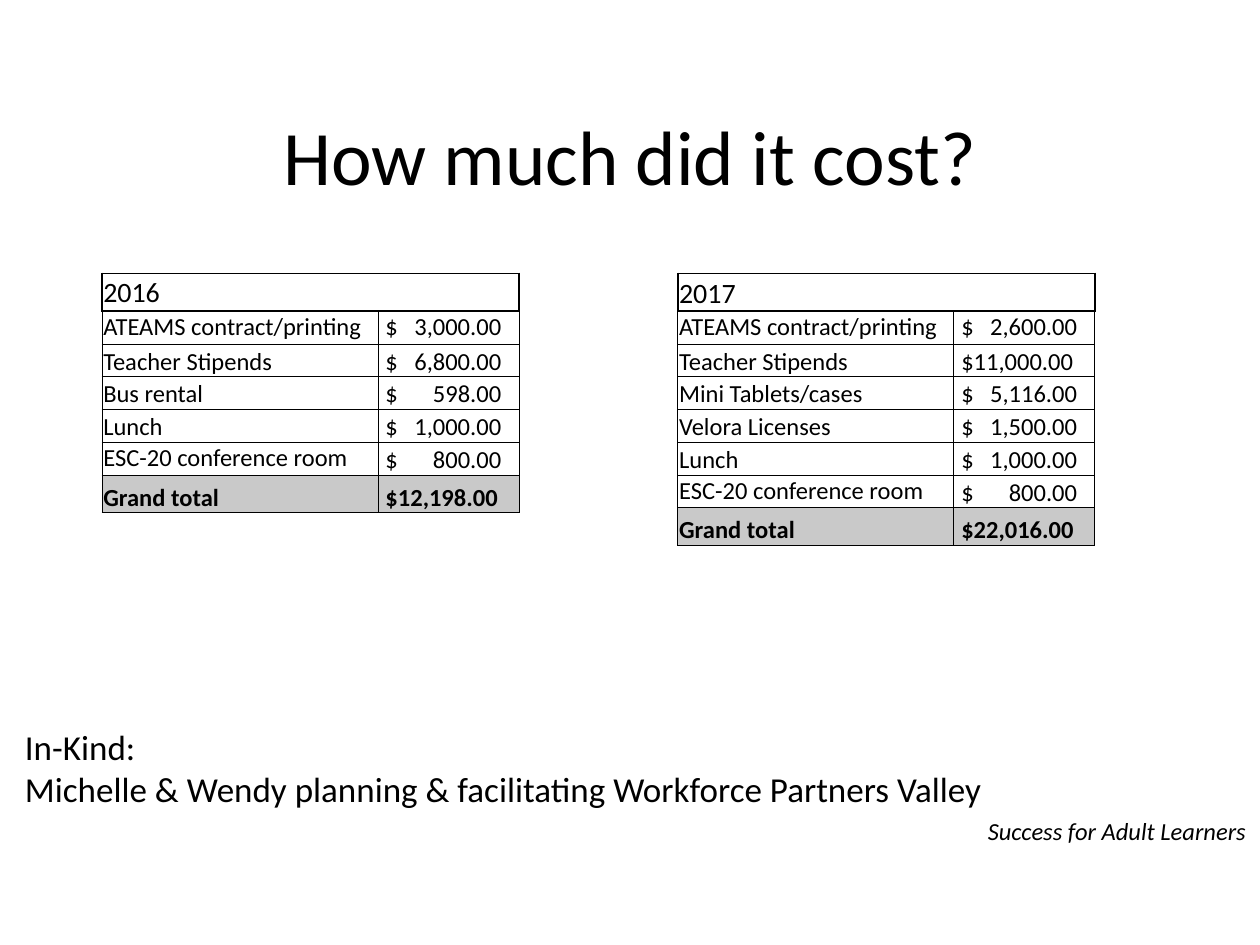
from pptx import Presentation, util as u
from pptx.dml.color import RGBColor
from pptx.enum import text
from pptx.oxml import parse_xml
from pptx.oxml.ns import nsdecls

INK = "000000"
TOTAL_FILL = "C9C9C9"
ANCHOR = text.MSO_ANCHOR
ALIGN = text.PP_ALIGN


def colour(value):
    return RGBColor.from_string(value)


def assign(target, values):
    for name, value in values.items():
        setattr(target, name, value)


class CostSlide:
    font = "Calibri"
    columns = (2.19, 1.12)
    amount_tab = 0.92

    def __init__(self, deck):
        self.slide = deck.slides.add_slide(deck.slide_layouts[6])

    def add_span(self, para, content, size, **style):
        span = para.add_run()
        span.text = content
        assign(span.font, {"name": self.font, "size": u.Pt(size), **style})
        span.font.color.rgb = colour(INK)

    def text_box(self, place, lines, size, align=ALIGN.LEFT,
                 frame_format=None, **style):
        box = self.slide.shapes.add_textbox(*map(u.Inches, place))
        frame = box.text_frame
        assign(frame, {"word_wrap": True, **(frame_format or {})})
        for index, line in enumerate(lines):
            para = frame.add_paragraph() if index else frame.paragraphs[0]
            para.alignment = align
            self.add_span(para, line, size, **style)

    def borders(self, cell, top, other):
        properties = cell._tc.get_or_add_tcPr()
        for side, width in zip("LRTB", (other, other, top, other)):
            properties.append(parse_xml(
                f'<a:ln{side} {nsdecls("a")} w="{u.Pt(width)}"><a:solidFill>'
                f'<a:srgbClr val="{INK}"/></a:solidFill></a:ln{side}>'))

    def cell(self, cell, content, size, anchor, top=0.5, other=0.5,
             fill=None, left=0.01, **style):
        assign(cell, {"margin_left": u.Inches(left),
                      "margin_right": u.Inches(0.01),
                      "margin_top": u.Inches(0.01),
                      "margin_bottom": 0,
                      "vertical_anchor": anchor})
        self.borders(cell, top, other)
        if fill:
            cell.fill.solid()
            cell.fill.fore_color.rgb = colour(fill)
        else:
            cell.fill.background()
        para = cell.text_frame.paragraphs[0]
        if "\t" in content:
            para._p.get_or_add_pPr().append(parse_xml(
                f'<a:tabLst {nsdecls("a")}><a:tab '
                f'pos="{u.Inches(self.amount_tab)}" algn="r"/></a:tabLst>'))
        if content:
            self.add_span(para, content, size, **style)

    def cost_table(self, left, year, year_anchor, costs, total):
        heights = [0.3] + [0.26] * len(costs) + [0.3]
        place = (left, 2.17, sum(self.columns), sum(heights))
        table = self.slide.shapes.add_table(
            len(heights), 2, *map(u.Inches, place)).table
        assign(table, {"first_row": False, "horz_banding": False})
        for column, width in zip(table.columns, self.columns):
            column.width = u.Inches(width)
        for row, height in zip(table.rows, heights):
            row.height = u.Inches(height)

        table.cell(0, 0).merge(table.cell(0, 1))
        for column, content in enumerate((year, "")):
            self.cell(table.cell(0, column), content, 16, year_anchor,
                      top=1, other=1)

        for row, (item, amount) in enumerate(costs, 1):
            first = row == 1
            amount_anchor = ANCHOR.TOP if first else ANCHOR.BOTTOM
            item_anchor = ANCHOR.TOP if row == len(costs) else amount_anchor
            top = 1 if first else 0.5
            gap = "\t" if len(amount) < 9 else ""
            self.cell(table.cell(row, 0), item, 14, item_anchor, top)
            self.cell(table.cell(row, 1), f"${gap}{amount}", 14,
                      amount_anchor, top, left=0.06)

        last = len(heights) - 1
        for column, content in enumerate(("Grand total", total)):
            self.cell(table.cell(last, column), content, 14, ANCHOR.BOTTOM,
                      fill=TOTAL_FILL, left=(0.01, 0.06)[column], bold=True)


def main():
    deck = Presentation()
    assign(deck, {"slide_width": u.Inches(10), "slide_height": u.Inches(7.5)})
    page = CostSlide(deck)
    page.text_box((0.5, 0.6, 9, 1.25), ["How much did it cost?"], 44,
                  ALIGN.CENTER, {"vertical_anchor": ANCHOR.MIDDLE})
    page.text_box((0.1, 5.71, 8.6, 1.11), [
        "In-Kind:",
        "Michelle & Wendy planning & facilitating Workforce Partners Valley",
    ], 20)
    page.cost_table(5.38, "2017", ANCHOR.BOTTOM, [
        ("ATEAMS contract/printing", "2,600.00"),
        ("Teacher Stipends", "11,000.00"),
        ("Mini Tablets/cases", "5,116.00"),
        ("Velora Licenses", "1,500.00"),
        ("Lunch", "1,000.00"),
        ("ESC-20 conference room", "800.00"),
    ], "$22,016.00")
    page.cost_table(0.81, "2016", ANCHOR.MIDDLE, [
        ("ATEAMS contract/printing", "3,000.00"),
        ("Teacher Stipends", "6,800.00"),
        ("Bus rental", "598.00"),
        ("Lunch", "1,000.00"),
        ("ESC-20 conference room", "800.00"),
    ], "$12,198.00")
    page.text_box((7.73, 6.43, 2.27, 0.34), ["Success for Adult Learners"], 14,
                  ALIGN.CENTER, {"word_wrap": False}, italic=True)
    deck.save("out.pptx")


if __name__ == "__main__":
    main()
